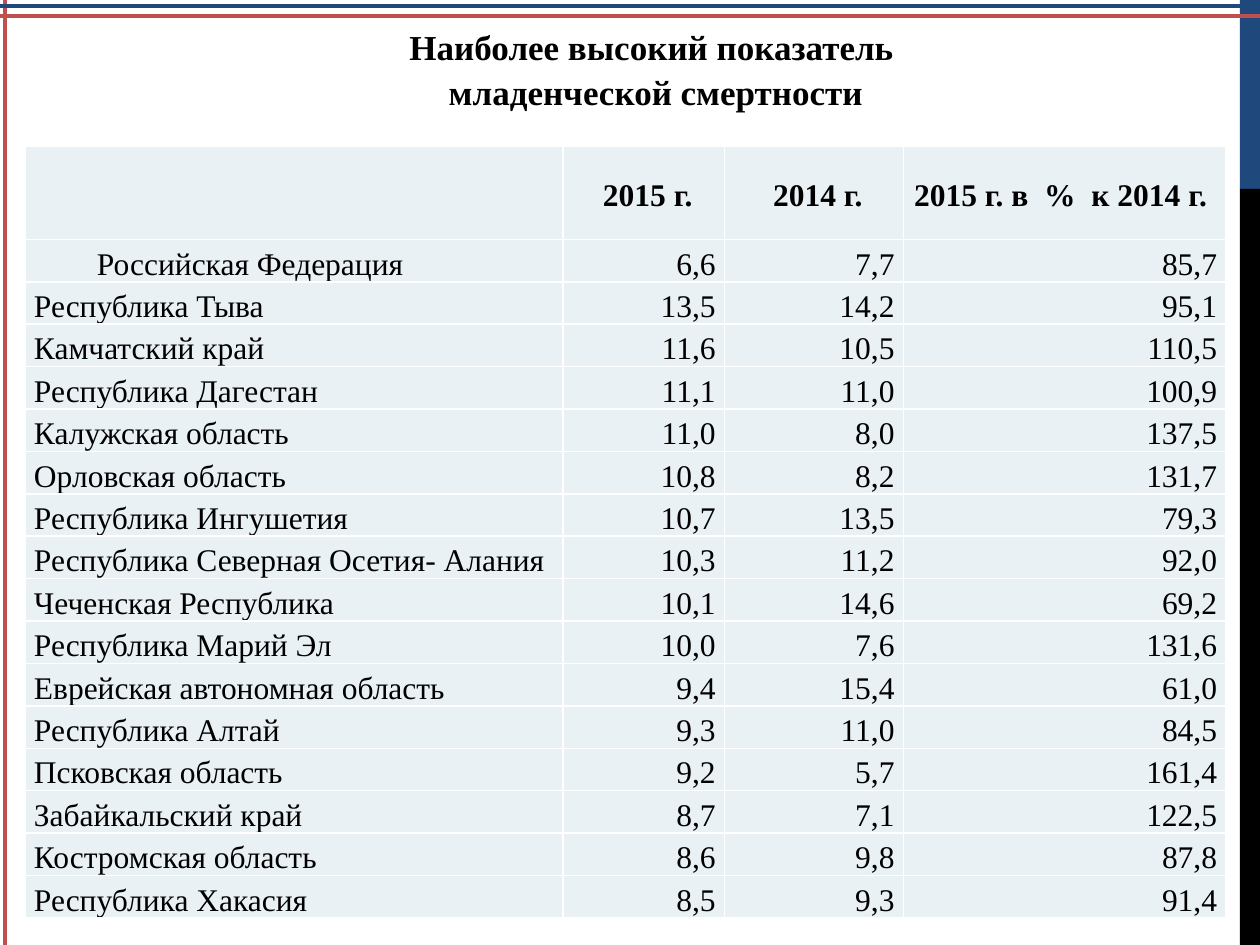
from lxml import etree
from pptx import Presentation
from pptx import util as u
from pptx.dml.color import RGBColor
from pptx.enum import shapes, text
from pptx.oxml import ns

WIDTH, HEIGHT = 10, 7.5
FONT = "Times New Roman"
COLORS = {
    "navy": "1F497D",
    "black": "000000",
    "red": "C0504D",
    "cell": "E9F1F5",
    "border": "FFFFFF",
}
COLUMNS = [4.27, 1.28, 1.42, 2.56]
HEADER_HEIGHT = 0.74
TABLE_LEFT, TABLE_TOP, TABLE_HEIGHT = 0.2, 1.16, 6.13
HEADER = ["", " 2015 г.", " 2014 г.", "2015 г. в  %  к 2014 г. "]
REGIONS = [
    ["Российская Федерация", "6,6", "7,7", "85,7"],
    ["Республика Тыва", "13,5", "14,2", "95,1"],
    ["Камчатский край", "11,6", "10,5", "110,5"],
    ["Республика Дагестан", "11,1", "11,0", "100,9"],
    ["Калужская область", "11,0", "8,0", "137,5"],
    ["Орловская область", "10,8", "8,2", "131,7"],
    ["Республика Ингушетия", "10,7", "13,5", "79,3"],
    ["Республика Северная Осетия- Алания", "10,3", "11,2", "92,0"],
    ["Чеченская Республика", "10,1", "14,6", "69,2"],
    ["Республика Марий Эл", "10,0", "7,6", "131,6"],
    ["Еврейская автономная область", "9,4", "15,4", "61,0"],
    ["Республика Алтай", "9,3", "11,0", "84,5"],
    ["Псковская область", "9,2", "5,7", "161,4"],
    ["Забайкальский край", "8,7", "7,1", "122,5"],
    ["Костромская область", "8,6", "9,8", "87,8"],
    ["Республика Хакасия", "8,5", "9,3", "91,4"],
]


def color(name):
    return RGBColor.from_string(COLORS[name])


def inches(*lengths):
    return [u.Inches(length) for length in lengths]


def add_band(page, top, height, fill):
    left = 0.984 * WIDTH
    band = page.shapes.add_shape(
        shapes.MSO_SHAPE.RECTANGLE, *inches(left, top, WIDTH - left, height))
    band.shadow.inherit = False
    band.fill.solid()
    band.fill.fore_color.rgb = color(fill)
    band.line.fill.background()


def add_rule(page, start, end, stroke):
    rule = page.shapes.add_connector(
        shapes.MSO_CONNECTOR.STRAIGHT, *inches(*start, *end))
    rule.line.color.rgb = color(stroke)
    rule.line.width = u.Pt(2.25)
    etree.SubElement(rule._element.spPr, ns.qn("a:effectLst"))


def format_paragraph(para, size, bold, alignment, spacing):
    para.alignment = alignment
    para.line_spacing = spacing
    para.font.size = u.Pt(size)
    for span in para.runs:
        span.font.name = FONT
        span.font.size = u.Pt(size)
        span.font.bold = bold
        span.font.color.rgb = color("black")


def add_title(page, title):
    box = page.shapes.add_textbox(*inches(0.68, 0.13, 9.05, 0.8))
    box.text_frame.word_wrap = True
    box.text_frame.text = title
    para = box.text_frame.paragraphs[0]
    format_paragraph(para, 20, True, text.PP_ALIGN.CENTER, 1.07)
    para.space_after = u.Pt(8)


def add_borders(cell):
    properties = cell._tc.get_or_add_tcPr()
    for side in ("lnL", "lnR", "lnT", "lnB"):
        line = etree.SubElement(properties, ns.qn(f"a:{side}"), w=str(u.Pt(1)))
        fill = etree.SubElement(line, ns.qn("a:solidFill"))
        etree.SubElement(fill, ns.qn("a:srgbClr"), val=COLORS["border"])


def fill_cell(cell, value, header, alignment):
    add_borders(cell)
    cell.fill.solid()
    cell.fill.fore_color.rgb = color("cell")
    cell.margin_left = cell.margin_right = u.Inches(0.07)
    cell.margin_top = cell.margin_bottom = 0
    cell.vertical_anchor = (
        text.MSO_ANCHOR.MIDDLE if header else text.MSO_ANCHOR.BOTTOM)
    cell.text_frame.text = value
    format_paragraph(cell.text_frame.paragraphs[0], 18, header, alignment, 1.15)


def add_rates_table(page):
    rows = [HEADER] + REGIONS
    table = page.shapes.add_table(
        len(rows), len(COLUMNS),
        *inches(TABLE_LEFT, TABLE_TOP, sum(COLUMNS), TABLE_HEIGHT)).table
    table.first_row = table.horz_banding = False
    for column, width in zip(table.columns, COLUMNS):
        column.width = u.Inches(width)
    region_height = (TABLE_HEIGHT - HEADER_HEIGHT) / len(REGIONS)
    for r, values in enumerate(rows):
        header = r == 0
        table.rows[r].height = u.Inches(HEADER_HEIGHT if header else region_height)
        for c, value in enumerate(values):
            if header:
                alignment = text.PP_ALIGN.CENTER
            else:
                alignment = text.PP_ALIGN.RIGHT if c else text.PP_ALIGN.LEFT
            fill_cell(table.cell(r, c), value, header, alignment)
    country = table.cell(1, 0).text_frame.paragraphs[0]
    properties = country._p.get_or_add_pPr()
    properties.set("marL", "0")
    properties.set("indent", str(u.Inches(0.5)))


def main():
    deck = Presentation()
    deck.slide_width, deck.slide_height = inches(WIDTH, HEIGHT)
    page = deck.slides.add_slide(deck.slide_layouts[6])
    add_band(page, 0, 0.2 * HEIGHT, "navy")
    add_band(page, 0.2 * HEIGHT, 0.8 * HEIGHT, "black")
    add_rule(page, (WIDTH, 0.13), (0, 0.13), "red")
    add_rule(page, (0.04, 0), (0.04, HEIGHT), "red")
    add_rule(page, (0, 0.05), (WIDTH, 0.05), "navy")
    add_rates_table(page)
    add_title(page, "Наиболее высокий показатель \vмладенческой смертности")
    deck.save("out.pptx")


if __name__ == "__main__":
    main()
